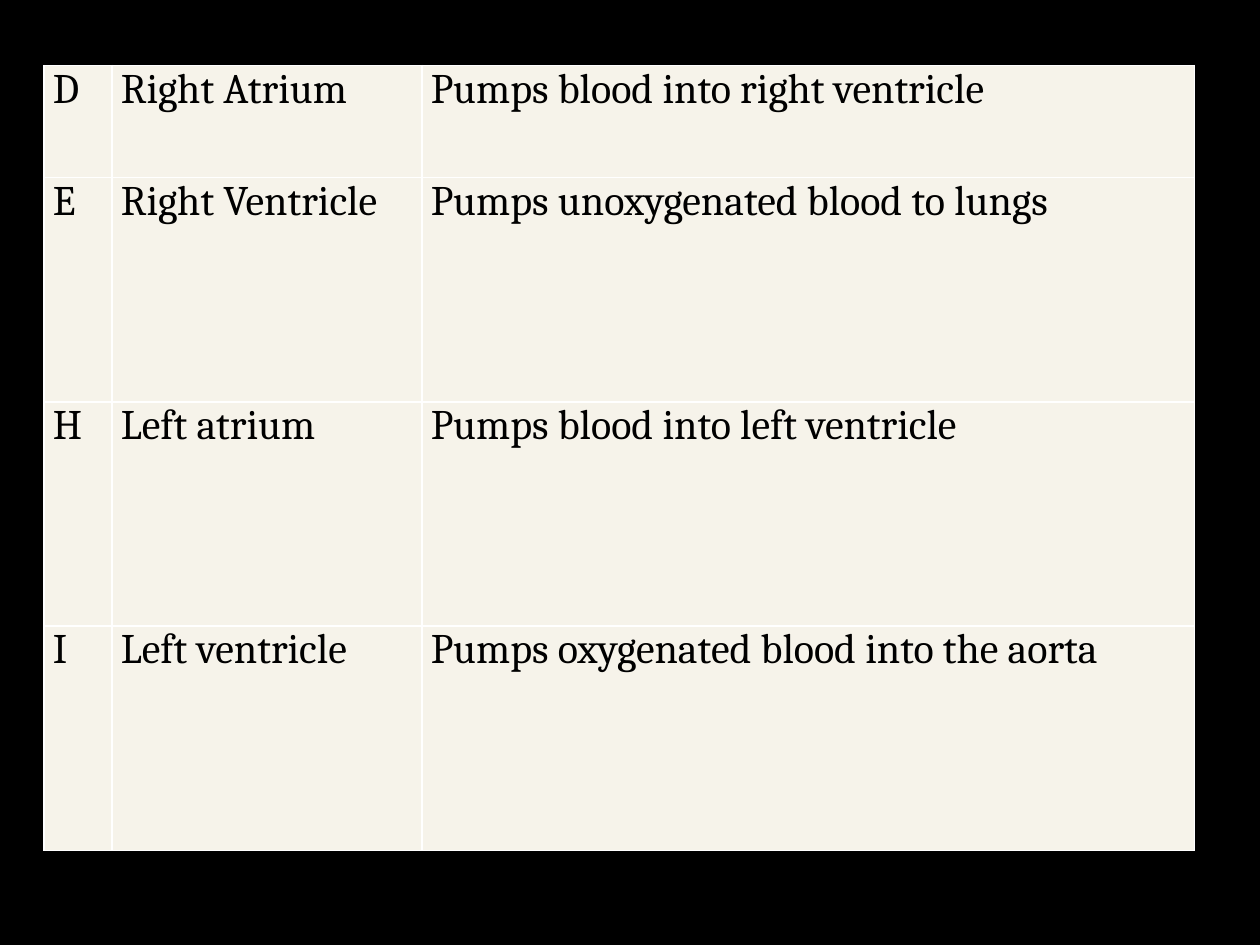
from dataclasses import dataclass

from lxml.etree import SubElement
from pptx import Presentation
from pptx.dml.color import RGBColor
from pptx.oxml.ns import qn
from pptx.slide import Slide
from pptx.util import Inches, Pt


def color(hex_code):
    """Turn a hex string into a colour."""
    return RGBColor.from_string(hex_code)


@dataclass
class SlideBuilder:
    """Hold the style and the current slide."""
    slide: Slide
    font: str = "Cambria"
    size: int = 24
    ink: str = "000000"
    paper: str = "F6F3EA"
    rule: str = "FFFFFF"

    def background(self, hex_code):
        """Fill the slide background."""
        fill = self.slide.background.fill
        fill.solid()
        fill.fore_color.rgb = color(hex_code)

    def table(self, left, top, widths, heights, rows):
        """Add a table with the given column widths and row heights."""
        frame = self.slide.shapes.add_table(
            len(heights), len(widths), Inches(left), Inches(top),
            Inches(sum(widths)), Inches(sum(heights)))
        grid = frame.table
        grid.first_row = grid.horz_banding = False
        for column, width in zip(grid.columns, widths):
            column.width = Inches(width)
        for row, height, texts in zip(grid.rows, heights, rows):
            row.height = Inches(height)
            for cell, text in zip(row.cells, texts):
                self.cell(cell, text)

    def cell(self, cell, text):
        """Write and format one table cell."""
        cell.margin_left = cell.margin_right = Inches(0.07)
        cell.margin_top = cell.margin_bottom = 0
        run = cell.text_frame.paragraphs[0].add_run()
        run.text = text
        run.font.name = self.font
        run.font.size = Pt(self.size)
        run.font.color.rgb = color(self.ink)
        self.borders(cell)
        cell.fill.solid()
        cell.fill.fore_color.rgb = color(self.paper)

    def borders(self, cell):
        """Draw a thin line on each side of a cell."""
        properties = cell._tc.get_or_add_tcPr()
        for side in ("lnL", "lnR", "lnT", "lnB"):
            line = SubElement(properties, qn(f"a:{side}"), w=str(Pt(1)))
            fill = SubElement(line, qn("a:solidFill"))
            SubElement(fill, qn("a:srgbClr"), val=self.rule)


def main():
    """Build the slide on heart chambers."""
    deck = Presentation()
    deck.slide_width, deck.slide_height = Inches(10), Inches(7.5)
    builder = SlideBuilder(deck.slides.add_slide(deck.slide_layouts[6]))
    builder.background("000000")
    chambers = [
        ("D", "Right Atrium", "Pumps blood into right ventricle"),
        ("E", "Right Ventricle", "Pumps unoxygenated blood to lungs"),
        ("H", "Left atrium", "Pumps blood into left ventricle"),
        ("I", "Left ventricle", "Pumps oxygenated blood into the aorta"),
    ]
    short_row = 0.89
    heights = [short_row] + [2 * short_row] * 3
    builder.table(0.35, 0.52, [0.54, 2.46, 6.13], heights, chambers)
    deck.save("out.pptx")


if __name__ == "__main__":
    main()
